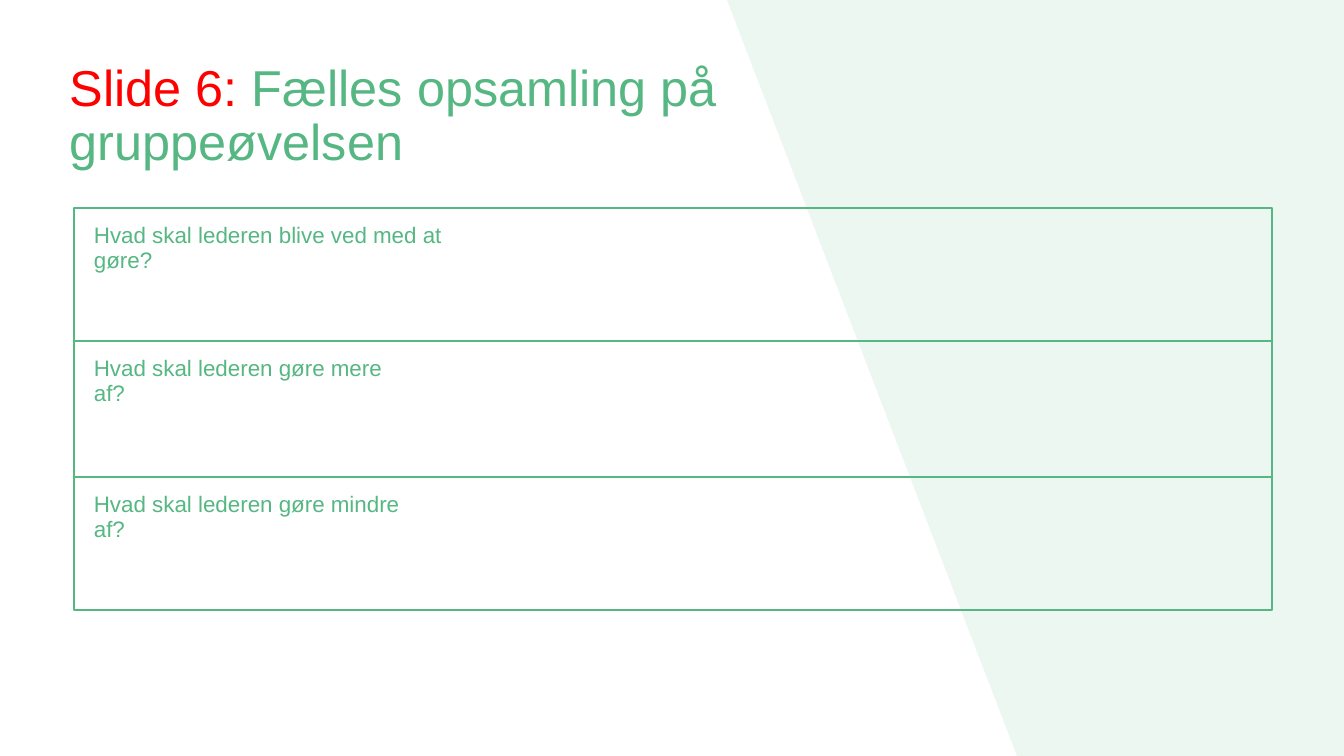
"""Build the slide that gathers the answers from the group exercise."""
from lxml import etree
from pptx import Presentation
from pptx.dml.color import RGBColor
from pptx.enum.shapes import MSO_SHAPE
from pptx.enum.text import MSO_ANCHOR
from pptx.oxml.ns import qn
from pptx.util import Pt

TITLE = [("Slide 6: ", "label"), ("Fælles opsamling på gruppeøvelsen", "heading")]
QUESTIONS = [
    ("Hvad skal lederen blive ved med at gøre?", 133, 415),
    ("Hvad skal lederen gøre mere af?", 136, 332),
    ("Hvad skal lederen gøre mindre af?", 133, 354),
]
WEDGE = [(727, 0), (1017, 756), (1344, 756), (1344, 0)]

GREEN = RGBColor(0x56, 0xB7, 0x83)
RED = RGBColor(0xFF, 0x00, 0x00)
TITLE_COLOURS = {"label": RED, "heading": GREEN}
FONT = "Arial"
RECTANGLE = MSO_SHAPE.RECTANGLE
TOP = MSO_ANCHOR.TOP

EMU_PER_PX = 914400 / 100.8
PAGE_WIDTH, PAGE_HEIGHT = 1344, 756
FRAME_LEFT, FRAME_TOP, FRAME_WIDTH = 74, 208, 1198
TEXT_OFFSET, QUESTION_HEIGHT = 10, 36


def px(length):
    return round(length * EMU_PER_PX)


def style(span, size, colour):
    span.font.name = FONT
    span.font.size = Pt(size)
    span.font.color.rgb = colour


def add_text(page, left, top, width, height, spacing):
    box = page.shapes.add_textbox(px(left), px(top), px(width), px(height))
    box.text_frame.word_wrap = True
    box.text_frame.vertical_anchor = TOP
    para = box.text_frame.paragraphs[0]
    para.line_spacing = spacing
    return para


def add_wedge(page):
    builder = page.shapes.build_freeform(*WEDGE[0], scale=EMU_PER_PX)
    builder.add_line_segments(WEDGE[1:], close=True)
    wedge = builder.convert_to_shape()
    wedge.shadow.inherit = False
    wedge.line.fill.background()
    wedge.fill.solid()
    wedge.fill.fore_color.rgb = GREEN
    colour = wedge.fill._xPr.find(qn("a:solidFill"))[0]
    etree.SubElement(colour, qn("a:alpha"), val="10000")


def add_title(page):
    para = add_text(page, 60, 58, 971, 112, 0.9)
    for words, role in TITLE:
        span = para.add_run()
        span.text = words
        style(span, 36, TITLE_COLOURS[role])


def add_questions(page):
    top = FRAME_TOP
    for question, height, text_width in QUESTIONS:
        frame = page.shapes.add_shape(
            RECTANGLE, px(FRAME_LEFT), px(top), px(FRAME_WIDTH), px(height))
        frame.shadow.inherit = False
        frame.fill.background()
        frame.line.color.rgb = GREEN
        frame.line.width = Pt(1)
        para = add_text(page, FRAME_LEFT + TEXT_OFFSET, top + TEXT_OFFSET,
                        text_width, QUESTION_HEIGHT, 0.95)
        para.text = question
        style(para.runs[0], 16, GREEN)
        top += height


def main():
    deck = Presentation()
    deck.slide_width, deck.slide_height = px(PAGE_WIDTH), px(PAGE_HEIGHT)
    page = deck.slides.add_slide(deck.slide_layouts[6])
    add_wedge(page)
    add_title(page)
    add_questions(page)
    deck.save("out.pptx")


if __name__ == "__main__":
    main()
